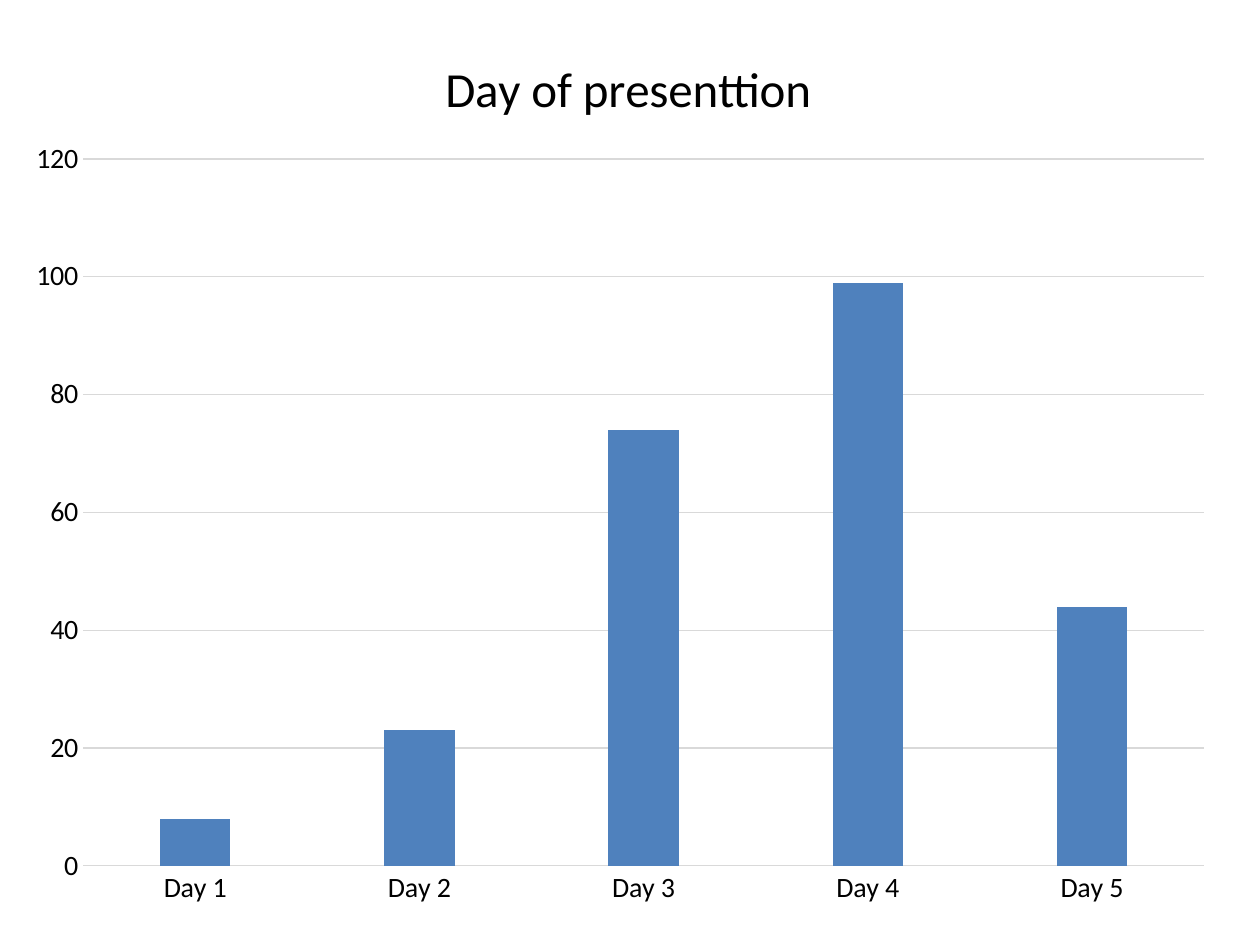
from dataclasses import dataclass

from lxml.etree import SubElement
from pptx import Presentation
from pptx.chart.data import CategoryChartData
from pptx.dml.color import RGBColor
from pptx.enum.chart import XL_CHART_TYPE, XL_TICK_MARK
from pptx.oxml.ns import qn
from pptx.util import Inches, Pt


@dataclass(frozen=True)
class Theme:
    font: str = "Calibri"
    text: str = "000000"
    bar: str = "4F81BD"
    grid: str = "D9D9D9"
    title_size: int = 28
    label_size: int = 16
    base_size: int = 10
    line_width: float = 0.75


THEME = Theme()
DAYS = ["Day 1", "Day 2", "Day 3", "Day 4", "Day 5"]
COUNTS = [8, 23, 74, 99, 44]


def style_font(font, size, color=THEME.text, bold=False):
    font.name = THEME.font
    font.size = Pt(size)
    font.bold = bold
    font.color.rgb = RGBColor.from_string(color)


def write_text(frame, text, **font_format):
    run = frame.paragraphs[0].add_run()
    run.text = text
    style_font(run.font, **font_format)


def style_line(line):
    line.color.rgb = RGBColor.from_string(THEME.grid)
    line.width = Pt(THEME.line_width)


def place(element, **settings):
    layout = element.get_or_add_layout() if hasattr(element, "get_or_add_layout") else element.find(qn("c:layout"))
    if layout is None:
        layout = element.makeelement(qn("c:layout"))
        element.insert(0, layout)
    for child in list(layout):
        layout.remove(child)
    manual = SubElement(layout, qn("c:manualLayout"))
    for tag, value in settings.items():
        SubElement(manual, qn(f"c:{tag}")).set("val", str(value))


def style_axis(axis):
    axis.major_tick_mark = XL_TICK_MARK.NONE
    axis.minor_tick_mark = XL_TICK_MARK.NONE
    style_font(axis.tick_labels.font, THEME.label_size)


def add_title(chart, text):
    chart.has_title = True
    title = chart.chart_title
    write_text(title.text_frame, text, size=THEME.title_size)
    title.include_in_layout = False
    place(title._element, xMode="edge", yMode="edge", x=0.35, y=0.04)


def add_day_chart(slide):
    data = CategoryChartData()
    data.categories = DAYS
    data.add_series("Series 1", COUNTS)
    chart = slide.shapes.add_chart(
        XL_CHART_TYPE.COLUMN_CLUSTERED,
        Inches(0.08), Inches(0.08), Inches(9.67), Inches(7.25), data,
    ).chart
    chart.has_legend = False
    style_font(chart.font, THEME.base_size)
    add_title(chart, "Day of presenttion")

    columns = chart.plots[0]
    columns.gap_width = 219
    columns.overlap = -27
    columns.vary_by_categories = False
    bars = columns.series[0].format.fill
    bars.solid()
    bars.fore_color.rgb = RGBColor.from_string(THEME.bar)

    days, counts = chart.category_axis, chart.value_axis
    for axis in (days, counts):
        style_axis(axis)
    style_line(days.format.line)
    counts.format.line.fill.background()
    counts.minimum_scale, counts.maximum_scale, counts.major_unit = 0, 120, 20
    counts.has_major_gridlines = True
    style_line(counts.major_gridlines.format.line)

    plot_area = chart._chartSpace.chart.plotArea
    place(plot_area, layoutTarget="inner", xMode="edge", yMode="edge",
          x=0.06, y=0.163, w=0.92, h=0.774)


def main():
    deck = Presentation()
    deck.slide_width, deck.slide_height = Inches(10), Inches(7.5)
    slide = deck.slides.add_slide(deck.slide_layouts[6])
    add_day_chart(slide)
    deck.save("out.pptx")


if __name__ == "__main__":
    main()
